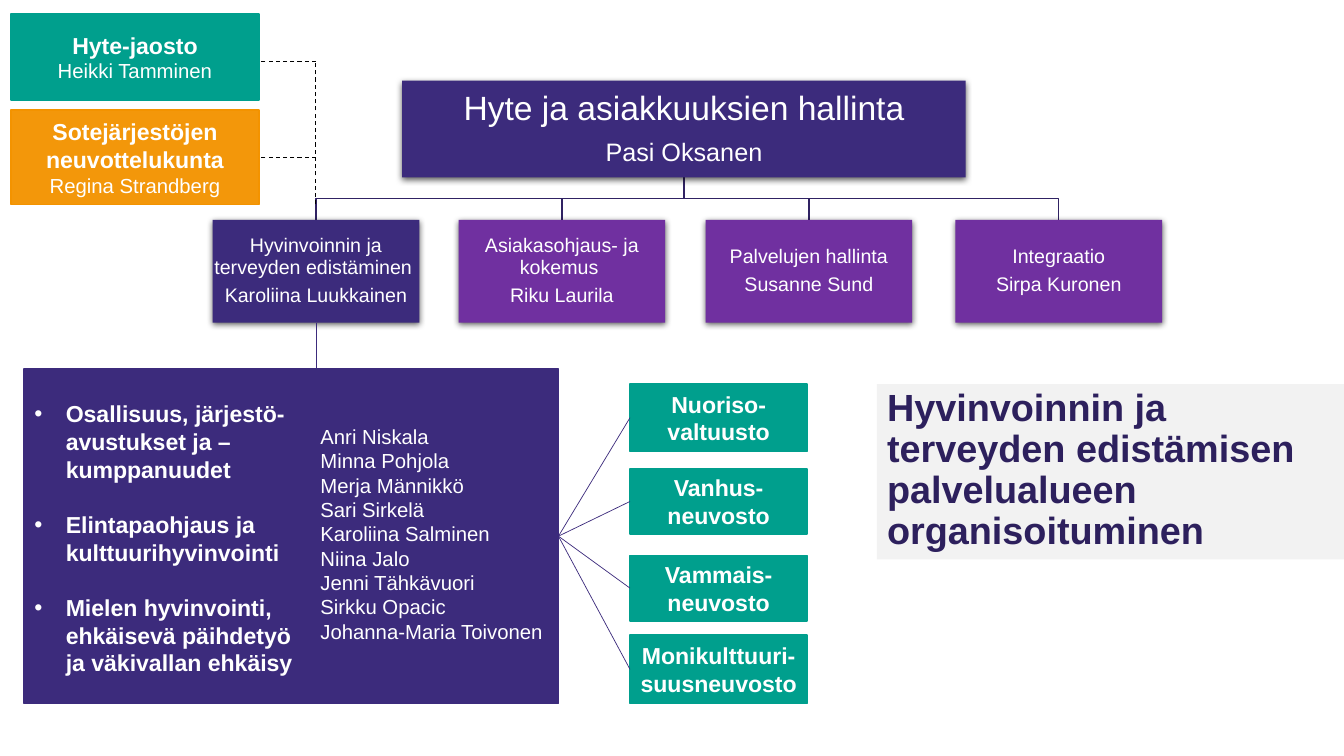
from lxml import etree
from pptx import Presentation, util as u
from pptx.dml.color import RGBColor
from pptx.enum import dml, shapes, text
from pptx.oxml import parse_xml
from pptx.oxml.ns import qn

Pt = u.Pt
FONT = "Arial"
HUES = {
    "teal": "009F8D", "amber": "F39300", "navy": "3C2B7C", "plum": "7030A0",
    "ink": "2D205D", "wire": "302263", "pale": "F2F2F2",
    "white": "FFFFFF", "black": "000000",
}
SHADE = (
    '<a:effectLst xmlns:a="http://schemas.openxmlformats.org/drawingml/2006/main">'
    '<a:outerShdw blurRad="57150" dist="19050" dir="5400000" algn="ctr" rotWithShape="0">'
    '<a:srgbClr val="000000"><a:alpha val="63000"/></a:srgbClr>'
    '</a:outerShdw></a:effectLst>'
)


def tint(name):
    return RGBColor.from_string(HUES[name])


def put(par, words, size, bold=False, hue="white"):
    """Add one run per line, with line breaks between."""
    for i, line in enumerate(words.split("\n")):
        if i:
            par.add_line_break()
        run = par.add_run()
        run.text = line
        run.font.name, run.font.size, run.font.bold = FONT, Pt(size), bold
        run.font.color.rgb = tint(hue)


def fill_text(frame, rows, align=text.PP_ALIGN.CENTER, anchor=text.MSO_ANCHOR.MIDDLE):
    """Write rows of (words, size, bold), one paragraph each."""
    frame.word_wrap = True
    frame.vertical_anchor = anchor
    for i, row in enumerate(rows):
        par = frame.add_paragraph() if i else frame.paragraphs[0]
        par.alignment = align
        put(par, *row)


def place(shape, box):
    shape.left, shape.top, shape.width, shape.height = map(Pt, box)


def add_box(slide, box, hue, rows, edge=True):
    shape = slide.shapes.add_shape(shapes.MSO_SHAPE.RECTANGLE, *map(Pt, box))
    shape.shadow.inherit = False
    shape.fill.solid()
    shape.fill.fore_color.rgb = tint(hue)
    if edge:
        shape.line.color.rgb = tint(hue)
        shape.line.width = Pt(1.25)
    else:
        shape.line.fill.background()
    fill_text(shape.text_frame, rows)
    return shape


def add_line(slide, start, end, hue="navy", width=0.5, dash=False):
    line = slide.shapes.add_connector(
        shapes.MSO_CONNECTOR.STRAIGHT, *map(Pt, (*start, *end)))
    line.line.color.rgb = tint(hue)
    line.line.width = Pt(width)
    if dash:
        line.line.dash_style = dml.MSO_LINE.DASH
    etree.SubElement(line._element.spPr, qn("a:effectLst"))
    return line


def add_title(slide, box):
    shape = slide.shapes.title
    place(shape, box)
    shape.fill.solid()
    shape.fill.fore_color.rgb = tint("pale")
    frame = shape.text_frame
    frame.auto_size = text.MSO_AUTO_SIZE.NONE
    words = "Hyvinvoinnin ja\nterveyden edistämisen\npalvelualueen organisoituminen"
    fill_text(frame, [(words, 27, True, "ink")],
              text.PP_ALIGN.LEFT, text.MSO_ANCHOR.TOP)
    frame.paragraphs[0].line_spacing = 0.9


def add_tasks(slide, box):
    """Purple panel: bulleted tasks on the left, names on the right."""
    x, y, w, h = box
    body = slide.placeholders[1]
    place(body, box)
    body.fill.solid()
    body.fill.fore_color.rgb = tint("navy")
    body.line.color.rgb = tint("navy")
    body.line.width = Pt(1.25)
    frame = body.text_frame
    frame.auto_size = text.MSO_AUTO_SIZE.NONE
    frame.margin_top = Pt(22)
    tasks = [
        "Osallisuus, järjestö-\navustukset ja –\nkumppanuudet",
        "Elintapaohjaus ja\nkulttuurihyvinvointi",
        "Mielen hyvinvointi,\nehkäisevä päihdetyö\nja väkivallan ehkäisy",
    ]
    fill_text(frame, [(task, 16.5, True) for task in tasks],
              text.PP_ALIGN.LEFT, text.MSO_ANCHOR.TOP)
    for i, par in enumerate(frame.paragraphs):
        props = par._p.get_or_add_pPr()
        props.set("marL", str(Pt(22.5)))
        props.set("indent", str(-Pt(22.5)))
        etree.SubElement(props, qn("a:buChar")).set("char", "•")
        par.space_before = Pt(19.7 if i else 0)
        par.font.size = Pt(16.5)
        par.font.color.rgb = tint("white")

    names = ["Anri Niskala", "Minna Pohjola", "Merja Männikkö", "Sari Sirkelä",
             "Karoliina Salminen", "Niina Jalo", "Jenni Tähkävuori",
             "Sirkku Opacic", "Johanna-Maria Toivonen"]
    note = slide.shapes.add_textbox(Pt(x + 204.5), Pt(y + 35.8), Pt(w - 204.5), Pt(164))
    fill_text(note.text_frame, [(name, 14.5, False) for name in names],
              text.PP_ALIGN.LEFT, text.MSO_ANCHOR.TOP)
    return body


def add_boards(slide, box):
    """Column of councils; spots are (offset, height, words)."""
    x, y, w, h = box
    spots = [
        (0, 48.2, "Nuoriso-\nvaltuusto"),
        (60.5, 46.8, "Vanhus-\nneuvosto"),
        (122.4, 46.8, "Vammais-\nneuvosto"),
        (179.3, 49, "Monikulttuuri-\nsuusneuvosto"),
    ]
    return [add_box(slide, (x, y + dy, w, tall), "teal",
                    [(part, 16.5, True) for part in words.split("\n")])
            for dy, tall, words in spots]


def add_guides(slide, box):
    """Two advisory bodies in the top left corner."""
    x, y, w, h = box
    add_box(slide, (x, y, w, 61.2), "teal",
            [("Hyte-jaosto", 16.5, True), ("Heikki Tamminen", 14.5, False)])
    panel = add_box(slide, (x, y + 68.4, w, h - 68.4), "amber",
                    [("Sotejärjestöjen neuvottelukunta", 16.5, True),
                     ("Regina Strandberg", 14.5, False)])
    solid = panel._element.spPr.find(qn("a:solidFill"))
    etree.SubElement(solid[0], qn("a:alpha")).set("val", "96000")
    return panel


def add_node(slide, box, hue, rows, inset):
    """Shadowed box of the tree."""
    node = add_box(slide, box, hue, rows, edge=False)
    props = node._element.spPr
    props.replace(props.find(qn("a:effectLst")), parse_xml(SHADE))
    frame = node.text_frame
    frame.margin_left = frame.margin_right = Pt(inset)
    frame.margin_top = frame.margin_bottom = Pt(inset)
    for par, row in zip(frame.paragraphs, rows):
        par.line_spacing = 0.9
        par.space_after = Pt(round(0.35 * row[1], 1))
    return node


def add_tree(slide, box):
    """Head box, elbow lines and four units; returns the first unit."""
    x, y, w, h = box
    wide, tall = 147.6, 73.4
    stem, root, bus, top = x + 336.8, y + 68.5, y + 84.2, y + h - tall
    units = [
        (0, "navy", "Hyvinvoinnin ja terveyden edistäminen ", "Karoliina Luukkainen"),
        (175.7, "plum", "Asiakasohjaus- ja kokemus ", "Riku Laurila"),
        (352.1, "plum", "Palvelujen hallinta", "Susanne Sund"),
        (530.6, "plum", "Integraatio", "Sirpa Kuronen"),
    ]
    for dx, *_ in units:
        mid = x + dx + wide / 2
        path = slide.shapes.build_freeform(Pt(stem), Pt(root))
        path.add_line_segments(
            [(Pt(a), Pt(b)) for a, b in ((stem, bus), (mid, bus), (mid, top))], close=False)
        elbow = path.convert_to_shape()
        elbow.shadow.inherit = False
        elbow.fill.background()
        elbow.line.color.rgb = tint("wire")
        elbow.line.width = Pt(1)
    add_node(slide, (x + 135.4, y, 402.5, 69.1), "navy",
             [("Hyte ja asiakkuuksien hallinta", 24), ("Pasi Oksanen", 18)], 1.5)
    nodes = [add_node(slide, (x + dx, top, wide, tall), hue, [(unit, 14), (lead, 14)], 0.7)
             for dx, hue, unit, lead in units]
    return nodes[0]


def add_links(slide, unit, tasks, boards, panel):
    # Fan from the task panel to the councils
    for board in boards:
        line = add_line(slide, (0, 0), (1, 1))
        line.begin_connect(tasks, 3)
        line.end_connect(board, 1)
    # Unit down to its tasks
    mid = (unit.left + unit.width / 2) / Pt(1)
    line = add_line(slide, (mid, 200), (mid, tasks.top / Pt(1)))
    line.begin_connect(unit, 2)
    # Dashed links to the advisory bodies
    add_line(slide, (mid, 146), (mid, 44), "black", 0.75, True)
    add_line(slide, (mid, 44), (185.8, 44), "black", 0.75, True)
    level = (panel.top + panel.height / 2) / Pt(1)
    line = add_line(slide, (mid, level), (185, level), "black", 0.75, True)
    line.end_connect(panel, 3)


def main():
    deck = Presentation()
    deck.slide_width, deck.slide_height = Pt(960), Pt(540)
    slide = deck.slides.add_slide(deck.slide_layouts[1])
    add_title(slide, (626.4, 274.3, 333.6, 125.3))
    tasks = add_tasks(slide, (17.3, 263.5, 381.6, 239))
    boards = add_boards(slide, (450, 274.3, 126.7, 228.3))
    panel = add_guides(slide, (7.9, 10.1, 177, 136.1))
    unit = add_tree(slide, (151.9, 57.6, 678.2, 172.8))
    add_links(slide, unit, tasks, boards, panel)
    deck.save("out.pptx")


if __name__ == "__main__":
    main()
